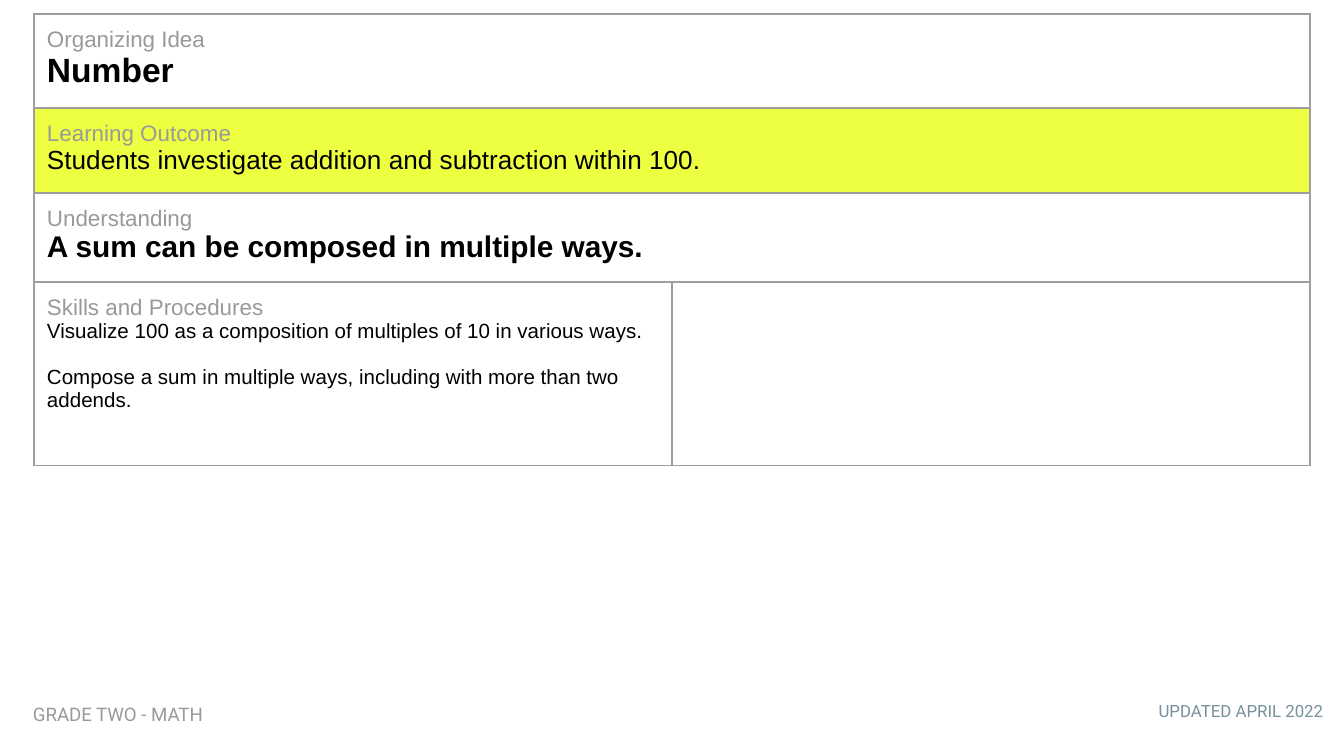
from dataclasses import dataclass

from lxml.etree import SubElement
from pptx import Presentation
from pptx.dml.color import RGBColor
from pptx.enum.text import PP_ALIGN as Align
from pptx.oxml.ns import qn
from pptx.util import Emu, Pt

EMU_PER_PX = 914400 / 134.4
INSET = 13
GREY, BLACK, BORDER = "999999", "000000", "9E9E9E"


@dataclass
class Line:
    text: str
    size: int
    color: str = BLACK
    bold: bool = False
    before: float = 0


@dataclass
class Band:
    height: int
    lines: list[Line]
    fill: str | None = None
    merged: bool = True


@dataclass
class Footer:
    text: str
    box: tuple[int, int, int, int]
    size: int
    color: str
    align: Align


def px(length: int) -> Emu:
    return Emu(round(length * EMU_PER_PX))


def rgb(value: str) -> RGBColor:
    return RGBColor.from_string(value)


def write(paragraph, text: str, *, size: int, color: str = BLACK, font: str = "Arial",
          bold: bool = False, before: float = 0, align: Align = Align.LEFT) -> None:
    paragraph.alignment = align
    paragraph.space_before = Pt(before)
    run = paragraph.add_run()
    run.text = text
    run.font.name, run.font.size, run.font.bold = font, Pt(size), bold
    run.font.color.rgb = rgb(color)


def set_insets(holder) -> None:
    holder.margin_left = holder.margin_right = px(INSET)
    holder.margin_top = holder.margin_bottom = px(INSET)


def format_cell(cell, fill: str | None) -> None:
    set_insets(cell)
    properties = cell._tc.get_or_add_tcPr()
    # Borders come before the fill in the cell properties
    for side in ("lnL", "lnR", "lnT", "lnB"):
        edge = SubElement(properties, qn(f"a:{side}"), w=str(Pt(0.75)))
        solid = SubElement(edge, qn("a:solidFill"))
        SubElement(solid, qn("a:srgbClr"), val=BORDER)
    if fill:
        cell.fill.solid()
        cell.fill.fore_color.rgb = rgb(fill)
    else:
        cell.fill.background()


def draw_outline(slide, bands: list[Band], left: int, top: int, column_width: int) -> None:
    height = sum(band.height for band in bands)
    outline = slide.shapes.add_table(len(bands), 2, px(left), px(top),
                                     px(2 * column_width), px(height)).table
    outline.first_row = outline.horz_banding = False
    for column in outline.columns:
        column.width = px(column_width)
    for index, band in enumerate(bands):
        outline.rows[index].height = px(band.height)
        first, second = outline.cell(index, 0), outline.cell(index, 1)
        for cell in (first, second):
            format_cell(cell, band.fill)
        if band.merged:
            first.merge(second)
        frame = first.text_frame
        for number, line in enumerate(band.lines):
            paragraph = frame.add_paragraph() if number else frame.paragraphs[0]
            write(paragraph, line.text, size=line.size, color=line.color,
                  bold=line.bold, before=line.before)


def draw_footer(slide, footer: Footer) -> None:
    frame = slide.shapes.add_textbox(*map(px, footer.box)).text_frame
    frame.word_wrap = True
    set_insets(frame)
    write(frame.paragraphs[0], footer.text, size=footer.size, color=footer.color,
          font="Roboto", align=footer.align)


BANDS = [
    Band(94, [Line("Organizing Idea", 12, GREY), Line("Number", 18, bold=True)]),
    Band(85, [Line("Learning Outcome", 12, GREY),
              Line("Students investigate addition and subtraction within 100.", 14)],
         fill="EEFF41"),
    Band(89, [Line("Understanding", 12, GREY),
              Line("A sum can be composed in multiple ways.", 16, bold=True)]),
    Band(184, [Line("Skills and Procedures", 12, GREY),
               Line("Visualize 100 as a composition of multiples of 10 in various ways.", 11),
               Line("Compose a sum in multiple ways, including with more than two addends.",
                    11, before=12.5)],
         merged=False),
]
FOOTERS = [
    Footer("UPDATED APRIL 2022", (973, 691, 363, 47), 9, "78909C", Align.RIGHT),
    Footer("GRADE TWO - MATH", (20, 692, 405, 50), 10, GREY, Align.LEFT),
]


def main() -> None:
    deck = Presentation()
    deck.slide_width, deck.slide_height = px(1344), px(756)
    slide = deck.slides.add_slide(deck.slide_layouts[6])

    # Curriculum outline
    draw_outline(slide, BANDS, left=34, top=14, column_width=638)

    # Footer notes
    for footer in FOOTERS:
        draw_footer(slide, footer)

    deck.save("out.pptx")


if __name__ == "__main__":
    main()
